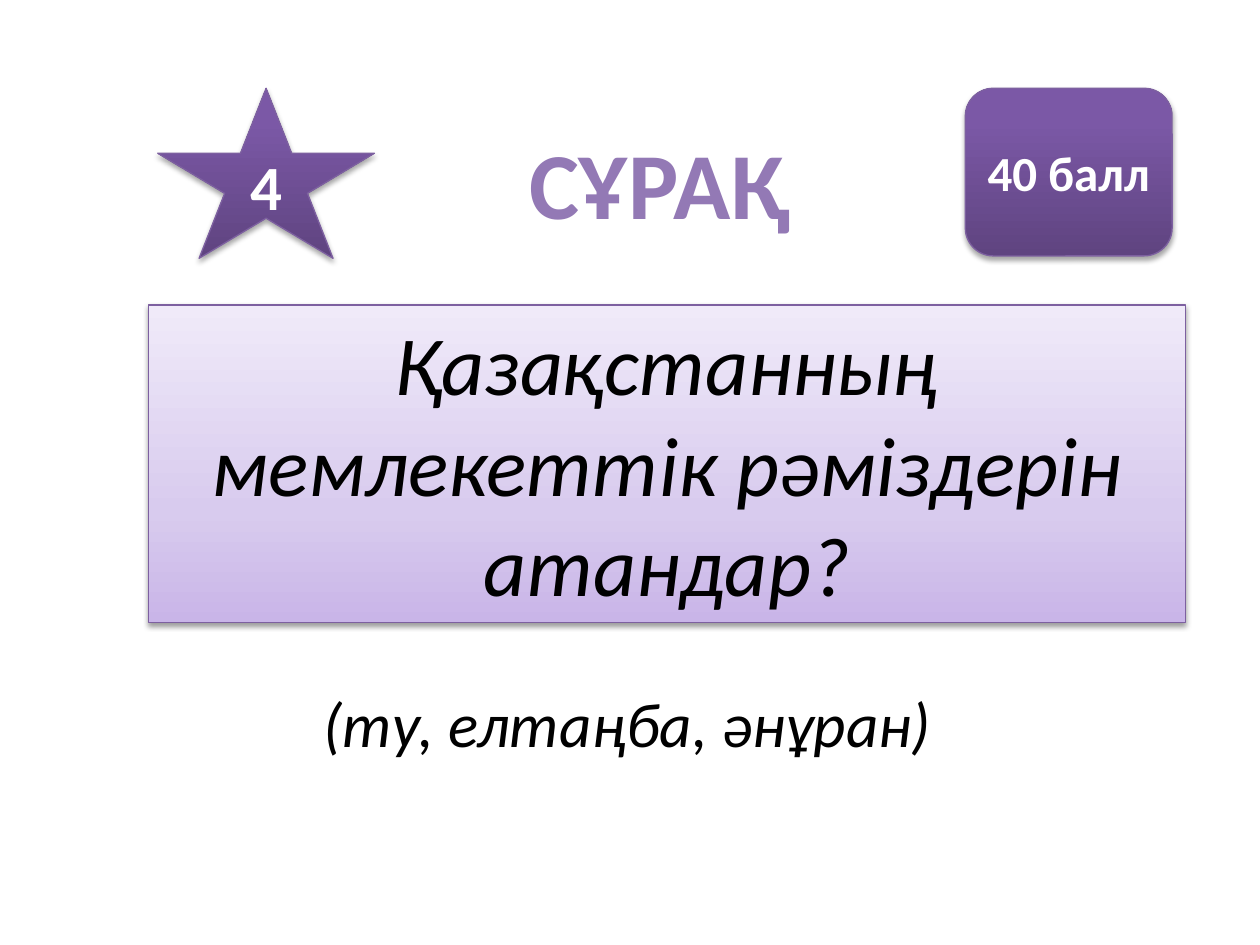
"""Build a quiz slide with a numbered star, a score, a question and its answer."""
from dataclasses import dataclass
from typing import Any, Optional

from lxml import etree
from pptx import Presentation
from pptx import util as u
from pptx.dml.color import RGBColor
from pptx.enum import shapes, text
from pptx.oxml.ns import nsdecls, qn

HUES = {
    "black": "000000", "white": "FFFFFF", "edge": "7D60A0",
    "pale": "C9B5E8", "mist": "D8CBEE", "frost": "F0EAF9",
    "dark": "5F4480", "plum": "7B58A6", "grape": "7C57A8",
    "lilac": "B099D2", "mauve": "9379B5",
}
SOFT = ((0, "pale"), (35, "mist"), (100, "frost"))
DEEP = ((0, "dark"), (80, "plum"), (100, "grape"))
GLOW = ((0, "lilac"), (40, "mauve"), (50, "mauve"), (68, "mauve"), (100, "lilac"))
KIND = shapes.MSO_SHAPE
MID = text.MSO_ANCHOR.MIDDLE
TOP = text.MSO_ANCHOR.TOP


@dataclass
class Label:
    """Text with its look and place in its box."""
    words: str
    size: int
    hue: str = "black"
    bold: bool = False
    slant: bool = False
    anchor: Any = MID
    wrap: bool = True
    grow: bool = False


@dataclass
class Card:
    """A filled shape with a label and a shadow."""
    kind: Any
    box: tuple
    stops: tuple
    shade: tuple
    label: Label


def blend(fill: Any, parent: Any, stops: tuple, angle: int) -> None:
    """Give a fill a gradient of several stops."""
    fill.background()
    marks = "".join(
        f'<a:gs pos="{pos * 1000}"><a:srgbClr val="{HUES[hue]}"/></a:gs>'
        for pos, hue in stops)
    grad = etree.fromstring(
        f'<a:gradFill {nsdecls("a")} rotWithShape="1"><a:gsLst>{marks}</a:gsLst>'
        f'<a:lin ang="{angle * 60000}" scaled="0"/></a:gradFill>')
    parent.replace(parent.find(qn("a:noFill")), grad)


def cast(shape: Any, shade: tuple) -> None:
    """Drop a soft shadow straight down."""
    alpha, gap = shade
    shape.shadow.inherit = False
    glow = etree.fromstring(
        f'<a:outerShdw {nsdecls("a")} blurRad="{u.Pt(3.1)}" dist="{u.Pt(gap)}" '
        f'dir="5400000" rotWithShape="0"><a:srgbClr val="{HUES["black"]}">'
        f'<a:alpha val="{alpha * 1000}"/></a:srgbClr></a:outerShdw>')
    shape._element.spPr.find(qn("a:effectLst")).append(glow)


def write(shape: Any, label: Label) -> Any:
    """Put a label in a shape and return its font."""
    frame = shape.text_frame
    frame.text = label.words
    frame.word_wrap = label.wrap
    frame.vertical_anchor = label.anchor
    if label.grow:
        frame.auto_size = text.MSO_AUTO_SIZE.SHAPE_TO_FIT_TEXT
    line = frame.paragraphs[0]
    line.alignment = text.PP_ALIGN.CENTER
    font = line.runs[0].font
    font.name = "Calibri"
    font.size = u.Pt(label.size)
    font.bold = label.bold
    font.italic = label.slant
    font.color.rgb = RGBColor.from_string(HUES[label.hue])
    return font


def draw(slide: Any, card: Card) -> None:
    """Draw one card."""
    shape = slide.shapes.add_shape(card.kind, *map(u.Cm, card.box))
    blend(shape.fill, shape._element.spPr, card.stops, 270)
    shape.line.color.rgb = RGBColor.from_string(HUES["edge"])
    shape.line.width = u.Pt(0.75)
    cast(shape, card.shade)
    write(shape, card.label)


def note(slide: Any, box: tuple, label: Label, stops: Optional[tuple] = None) -> Any:
    """Draw one text box, with gradient letters if stops are given."""
    shape = slide.shapes.add_textbox(*map(u.Cm, box))
    font = write(shape, label)
    if stops:
        run = shape.text_frame.paragraphs[0].runs[0]
        blend(font.fill, run._r.get_or_add_rPr(), stops, 90)
    return shape


def main() -> None:
    """Build and save the slide."""
    deck = Presentation()
    deck.slide_width, deck.slide_height = u.Cm(25.4), u.Cm(19.05)
    slide = deck.slides.add_slide(deck.slide_layouts[6])

    draw(slide, Card(KIND.RECTANGLE, (3, 6.15, 20.9, 6.4), SOFT, (38, 1.6), Label(
        "Қазақстанның мемлекеттік рәміздерін атандар?", 48,
        slant=True, anchor=TOP, grow=True)))
    reply = note(slide, (4.29, 12.32, 17.27, 5.94),
                 Label("(ту, елтаңба, әнұран)", 36, slant=True))
    reply.text_frame.margin_right = u.Cm(0.8)
    reply.text_frame.margin_bottom = u.Cm(1.6)

    badges = (
        (KIND.ROUNDED_RECTANGLE, (19.46, 1.78, 4.17, 3.38), "40 балл", 28),
        (KIND.STAR_5_POINT, (3.18, 1.78, 4.37, 3.43), "4", 36),
    )
    for kind, box, words, size in badges:
        draw(slide, Card(kind, box, DEEP, (35, 1.8),
                         Label(words, size, "white", bold=True)))
    note(slide, (10.39, 2.39, 5.79, 2.57),
         Label("СҰРАҚ", 54, "mauve", bold=True, anchor=TOP, wrap=False, grow=True),
         GLOW)
    deck.save("out.pptx")


if __name__ == "__main__":
    main()
